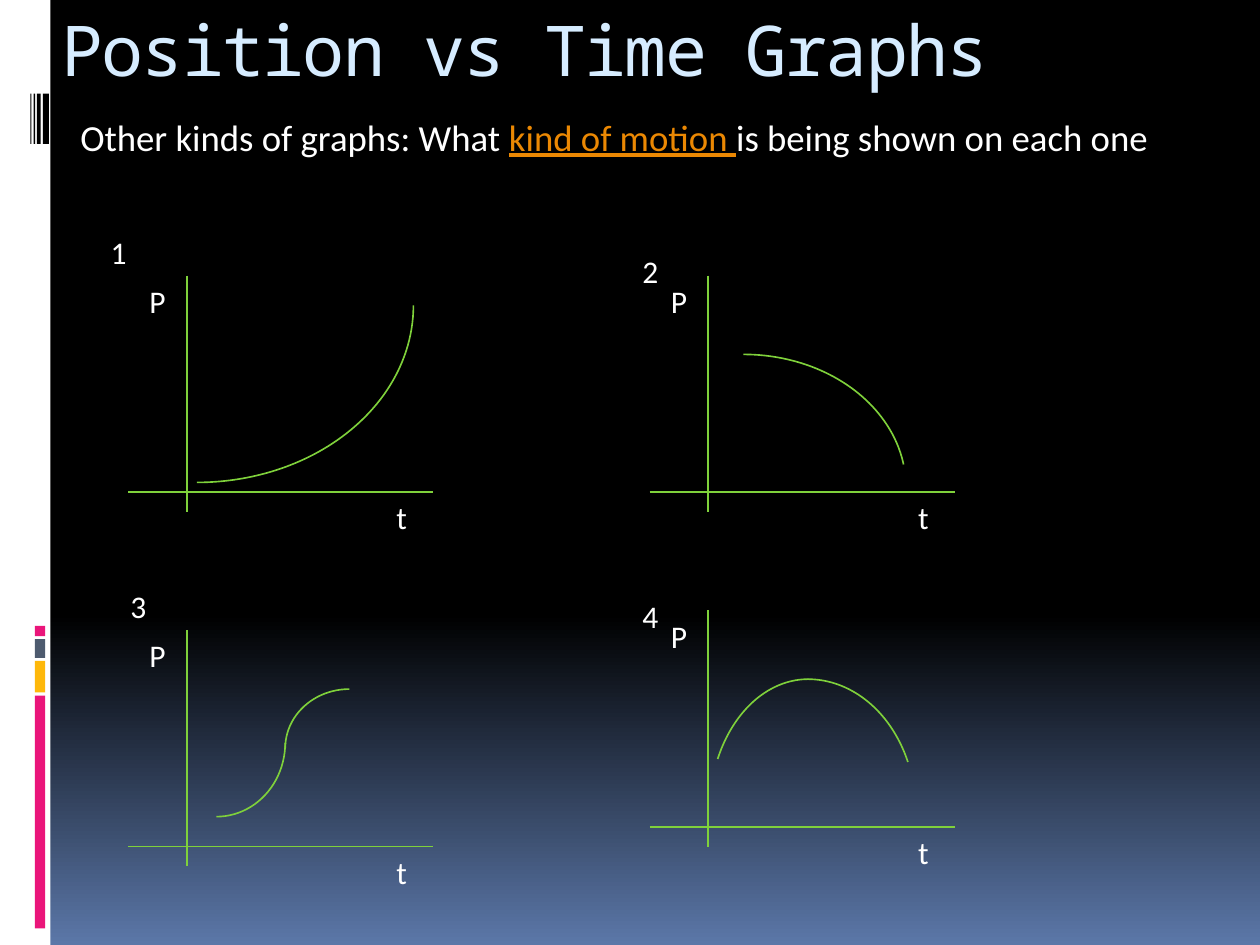
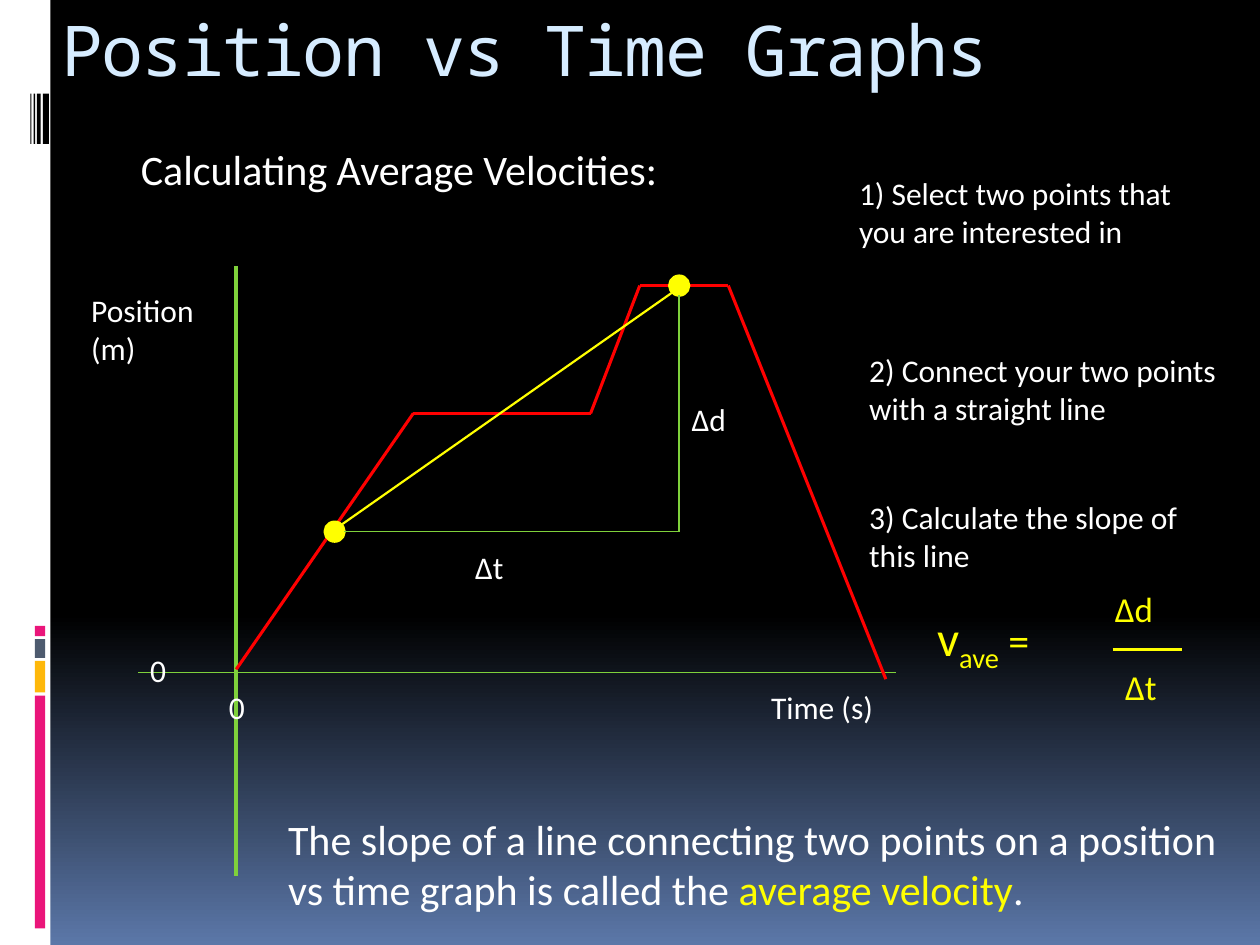
from lxml import etree
from pptx import Presentation
from pptx.dml.color import RGBColor
from pptx.enum.shapes import MSO_CONNECTOR, MSO_SHAPE
from pptx.oxml.ns import qn
from pptx.util import Pt

STRAIGHT = MSO_CONNECTOR.STRAIGHT
RECTANGLE, OVAL, ARC = MSO_SHAPE.RECTANGLE, MSO_SHAPE.OVAL, MSO_SHAPE.ARC

COLORS = {
    "white": "FFFFFF", "black": "000000", "sky": "5B77A8", "title": "D6ECFF",
    "pink": "EA157A", "amber": "FEB80A", "slate": "4E5B6F",
    "green": "7FD13B", "orange": "EB8803", "red": "FF0000", "yellow": "FFFF00",
}
BODY_FONT, TITLE_FONT = "Calibri", "Noto Sans Mono"
THIN = 0.94
QUARTER_START, QUARTER_END = 162, 0  # arc adjustments, top to right
STRIPES = [  # left, top, width, height, colour
    (0, 0, 28.8, 540, "white"),
    (20, 397.5, 5.9, 133, "pink"),
    (20, 377.7, 5.9, 18, "amber"),
    (20, 365.2, 5.9, 10.8, "slate"),
    (20, 357.7, 5.9, 5.8, "pink"),
    (24.5, 53.5, 3.5, 28.8, "black"),
    (21.1, 53.5, 2.2, 28.8, "black"),
    (19.3, 53.5, 0.8, 28.8, "black"),
    (17.3, 53.5, 0.7, 28.8, "black"),
]


def rgb(color):
    return RGBColor.from_string(COLORS[color])


def add_text(shapes, left, top, width, height, parts, size=18, color="white",
             font=BODY_FONT, hanging=False):
    """Add a text box; parts is a string or a list of (text, colour) runs."""
    box = shapes.add_textbox(Pt(left), Pt(top), Pt(width), Pt(height))
    box.text_frame.word_wrap = True
    paragraph = box.text_frame.paragraphs[0]
    if isinstance(parts, str):
        paragraph.text = parts
        run_colors = [color] * len(paragraph.runs)
    else:
        for text, _ in parts:
            paragraph.add_run().text = text
        run_colors = [run_color for _, run_color in parts]
    for run, run_color in zip(paragraph.runs, run_colors):
        run.font.name = font
        run.font.size = Pt(size)
        run.font.color.rgb = rgb(run_color)
    if hanging:
        properties = paragraph._p.get_or_add_pPr()
        properties.set("marL", str(Pt(32.4)))
        properties.set("indent", str(Pt(-27.4)))
    return paragraph


def add_line(shapes, start, end, color="green", width=THIN):
    line = shapes.add_connector(STRAIGHT, *map(Pt, start + end))
    line.line.color.rgb = rgb(color)
    line.line.width = Pt(width)
    etree.SubElement(line.element.spPr, qn("a:effectLst"))


def add_arc(shapes, left, top, width, height, flip=None, end=QUARTER_END):
    """Add an arc from the top of its ellipse; flip is None, 'flipH' or 'flipV'."""
    arc = shapes.add_shape(ARC, Pt(left), Pt(top), Pt(width), Pt(height))
    arc.shadow.inherit = False
    arc.adjustments[0] = QUARTER_START
    arc.adjustments[1] = end
    arc.fill.background()
    arc.line.color.rgb = rgb("green")
    arc.line.width = Pt(THIN)
    if flip:
        arc.element.spPr.xfrm.set(flip, "1")


def add_stripe(shapes, left, top, width, height, color):
    stripe = shapes.add_shape(RECTANGLE, Pt(left), Pt(top), Pt(width), Pt(height))
    stripe.shadow.inherit = False
    stripe.fill.solid()
    stripe.fill.fore_color.rgb = rgb(color)
    stripe.line.fill.background()


def add_point(shapes, center_x, center_y, diameter=11.25):
    radius = diameter / 2
    point = shapes.add_shape(OVAL, Pt(center_x - radius), Pt(center_y - radius),
                             Pt(diameter), Pt(diameter))
    point.shadow.inherit = False
    point.fill.solid()
    point.fill.fore_color.rgb = rgb("yellow")
    point.line.color.rgb = rgb("yellow")
    point.line.width = Pt(1.5)


def set_background(master):
    fill = master.background.fill
    fill.gradient()
    fill.gradient_angle = 270
    for stop, position, color in zip(fill.gradient_stops, (0.65, 1), ("black", "sky")):
        stop.position = position
        stop.color.rgb = rgb(color)


def add_base_slide(prs):
    """Add a slide with the side band and the shared title."""
    shapes = prs.slides.add_slide(prs.slide_layouts[6]).shapes
    for stripe in STRIPES:
        add_stripe(shapes, *stripe)
    title = add_text(shapes, 28.1, 0, 612, 72, "Position vs Time Graphs", 40,
                     "title", TITLE_FONT)
    title.runs[0].font._element.set("spc", "-100")
    return shapes


def add_motion_graph(shapes, left, top, number, number_at, arcs):
    """Add numbered P-t axes and the arcs that form the curve."""
    graph = shapes.add_group_shape().shapes
    axis_x, axis_y = left + 33.5, top + 123.75
    add_line(graph, (axis_x, top), (axis_x, top + 135))
    add_line(graph, (left, axis_y), (left + 174.4, axis_y))
    add_text(graph, left + 5, top, 33.75, 29, "P")
    add_text(graph, left + 146.3, axis_y, 28, 29, "t")
    for arc in arcs:
        add_arc(graph, *arc)
    add_text(graph, *number_at, 16.9, 29, number)


def build_kinds_of_motion(prs):
    shapes = add_base_slide(prs)
    prompt = add_text(shapes, 33.8, 61.9, 641.5, 51.1, [
        ("Other kinds of graphs: What ", "white"),
        ("kind of motion ", "orange"),
        ("is being shown on each one", "white"),
    ], 21, hanging=True)
    prompt.runs[1].font.underline = True

    left_column, right_column = 73.2, 371.25
    add_motion_graph(shapes, left_column, 157.5, "1", (56.2, 129.6),
                     [(-11.25, 73.4, 247.5, 202.3, "flipV")])
    add_motion_graph(shapes, right_column, 157.5, "2", (360, 140.6),
                     [(331.9, 202.5, 185.8, 151.9, None, 211.13)])
    add_motion_graph(shapes, left_column, 360, "3", (67.5, 332),
                     [(84.4, 382.3, 78.6, 84.4, "flipV"),
                      (163, 393.75, 73.4, 67.5, "flipH")])
    add_motion_graph(shapes, right_column, 348.75, "4", (360, 337.5),
                     [(399.6, 388.1, 123.8, 151.9, None, 200.08),
                      (405.4, 388.1, 113, 151.9, "flipH", 197.8)])


def add_position_graph(shapes):
    graph = shapes.add_group_shape().shapes
    add_line(graph, (135, 151.9), (135, 500.6), width=2)
    add_line(graph, (78.75, 384.4), (512, 384.4))
    add_text(graph, 45, 163, 78.5, 47.5, "Position (m)")
    add_text(graph, 433.5, 389.5, 78.5, 27.4, "Time (s)")
    add_text(graph, 78.75, 368.6, 33.75, 27.4, "0")
    add_text(graph, 123.75, 389.5, 33.75, 27.4, "0")
    journey = [(135, 382.5), (236.2, 236.2), (337.5, 236.2),
               (365.6, 163.2), (416.2, 163.2), (506.2, 388.1)]
    for start, end in zip(journey, journey[1:]):
        add_line(graph, start, end, "red", 1.75)


def add_velocity_formula(shapes):
    formula = shapes.add_group_shape().shapes
    velocity = add_text(formula, 523.4, 343.4, 112.5, 56.2,
                        [("v", "yellow"), ("ave", "yellow"), (" =", "yellow")],
                        28, hanging=True)
    velocity.runs[1].font._element.set("baseline", "-25000")
    velocity.runs[2].font.size = Pt(24)
    add_text(formula, 630, 331.9, 56.2, 31.7, "Δd", 20, "yellow")
    add_line(formula, (635.8, 371.4), (675.2, 371.4), "yellow", 1.75)
    add_text(formula, 635.8, 376.6, 45.4, 31.7, "Δt", 20, "yellow")


def build_average_velocity(prs):
    shapes = add_base_slide(prs)
    add_position_graph(shapes)
    add_text(shapes, 73.4, 78.75, 371.5, 36, "Calculating Average Velocities:", 24)

    steps = [(483.8, 95.8, "1) Select two points that\vyou are interested in"),
             (489.6, 196.9, "2) Connect your two points with a straight line"),
             (489.6, 281.2, "3) Calculate the slope of this line")]
    for left, top, step in steps:
        add_text(shapes, left, top, 219.6, 51, step)

    (low_x, low_y), (high_x, high_y) = (191.2, 303.8), (388.1, 163.2)
    add_point(shapes, low_x, low_y)
    add_point(shapes, high_x, high_y)
    add_line(shapes, (low_x + 4, low_y - 4), (high_x - 4, high_y + 4), "yellow", 1.25)
    add_line(shapes, (high_x, high_y + 5.6), (high_x, low_y))
    add_line(shapes, (low_x + 5.6, low_y), (high_x, low_y))
    add_text(shapes, 388.1, 225, 39.6, 29, "Δd")
    add_text(shapes, 264.4, 309.4, 39.6, 29, "Δt")

    add_velocity_formula(shapes)
    add_text(shapes, 157.5, 461.2, 545.8, 65.5, [
        ("The slope of a line connecting two points on a position vs time graph "
         "is called the ", "white"),
        ("average velocity", "yellow"),
        (".", "white"),
    ], 24)


def main():
    prs = Presentation()
    prs.slide_width, prs.slide_height = Pt(720), Pt(540)
    set_background(prs.slide_master)
    build_kinds_of_motion(prs)
    build_average_velocity(prs)
    prs.save("out.pptx")


if __name__ == "__main__":
    main()
